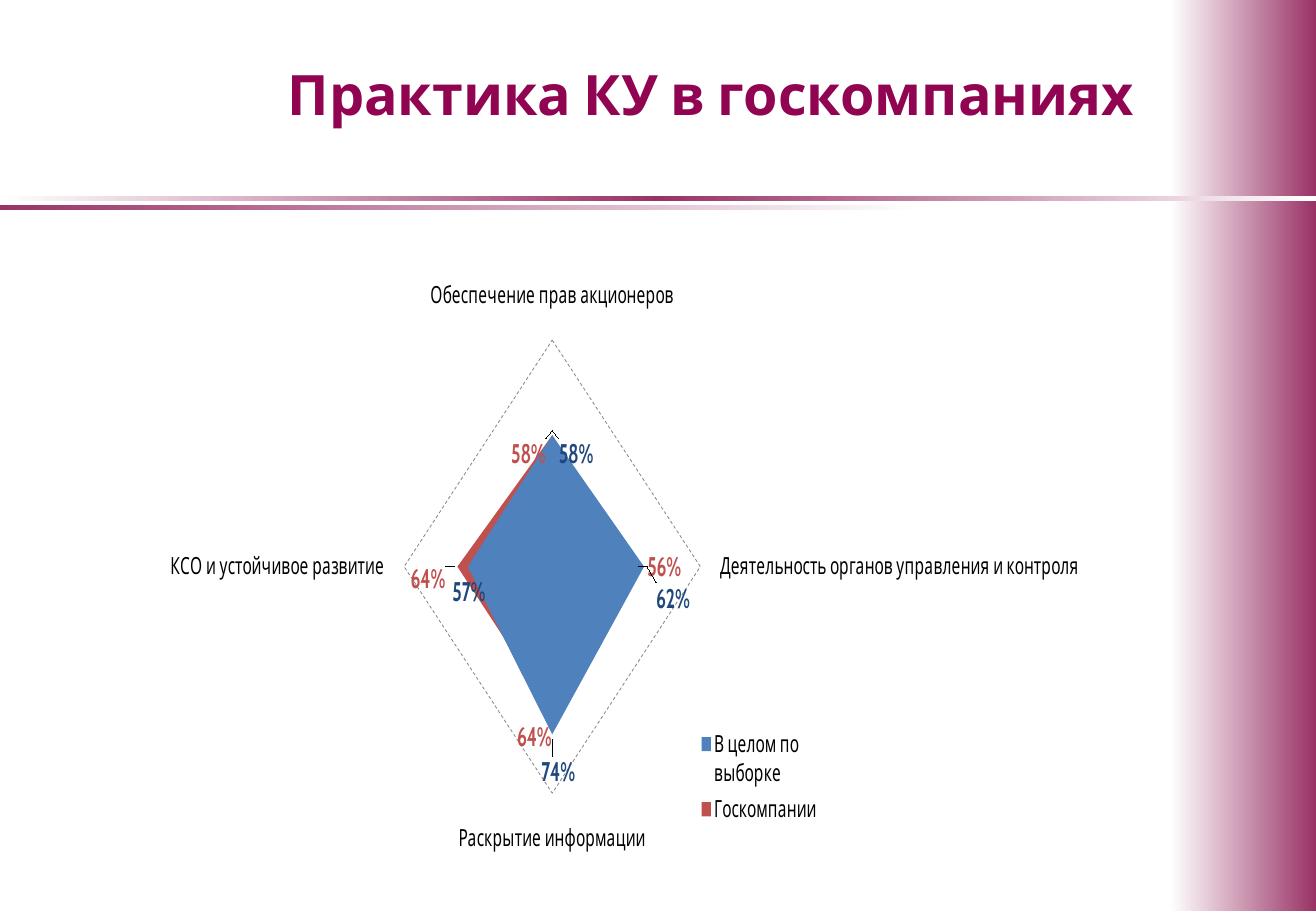
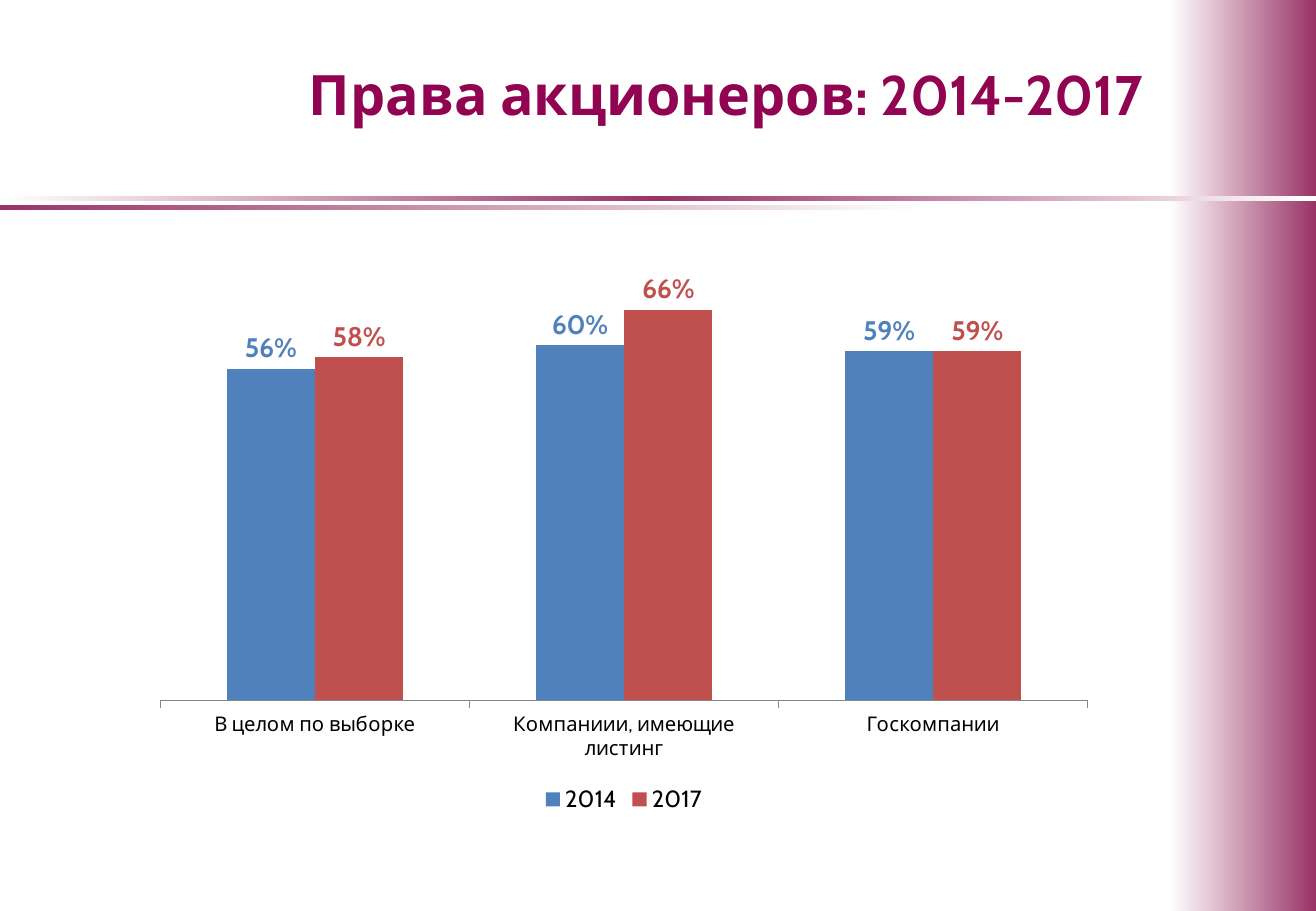
"""Two slides on governance in state companies."""
from dataclasses import dataclass

from lxml import etree
from pptx import Presentation
from pptx.chart.data import CategoryChartData
from pptx.dml.color import RGBColor
from pptx.enum.chart import XL_CHART_TYPE, XL_LABEL_POSITION, XL_LEGEND_POSITION
from pptx.enum.chart import XL_TICK_LABEL_POSITION, XL_TICK_MARK
from pptx.enum.dml import MSO_LINE
from pptx.enum.shapes import MSO_SHAPE
from pptx.enum.text import MSO_ANCHOR, MSO_AUTO_SIZE, PP_ALIGN
from pptx.oxml.ns import qn
from pptx.util import Cm, Pt

RADAR = XL_CHART_TYPE.RADAR_FILLED
COLUMN = XL_CHART_TYPE.COLUMN_CLUSTERED
RIGHT, BOTTOM = XL_LEGEND_POSITION.RIGHT, XL_LEGEND_POSITION.BOTTOM
OUTER = XL_LABEL_POSITION.OUTSIDE_END
LOW = XL_TICK_LABEL_POSITION.LOW
OUT, NONE = XL_TICK_MARK.OUTSIDE, XL_TICK_MARK.NONE
DASH = MSO_LINE.DASH
RECT = MSO_SHAPE.RECTANGLE
MIDDLE, CENTER = MSO_ANCHOR.MIDDLE, PP_ALIGN.CENTER
FIXED = MSO_AUTO_SIZE.NONE


@dataclass(frozen=True)
class Theme:
    """Colours, font and type sizes of the deck."""
    font: str = "Cabin"
    title: str = "900451"
    band: str = "993366"
    white: str = "FFFFFF"
    black: str = "000000"
    grid: str = "868686"
    blue: str = "4F81BD"
    navy: str = "1F497D"
    red: str = "C0504D"
    head: int = 33
    value: int = 16
    label: int = 14
    small: int = 12
    base: int = 10


def place(node, index, **parts):
    """Give a chart node a manual layout."""
    for old in node.findall(qn("c:layout")):
        node.remove(old)
    layout = etree.Element(qn("c:layout"))
    manual = etree.SubElement(layout, qn("c:manualLayout"))
    for name, val in parts.items():
        etree.SubElement(manual, qn("c:" + name)).set("val", str(val))
    node.insert(index, layout)


class Deck:
    """Holds the style and the current slide."""

    def __init__(self, theme):
        """Start an empty deck."""
        self.theme = theme
        self.prs = Presentation()
        self.prs.slide_width, self.prs.slide_height = Cm(27.51), Cm(19.05)
        self.base = self.prs.slide_layouts[5]
        self.count = 0

    def style(self, font, size, color, bold=False):
        """Set one font."""
        font.name, font.size, font.bold = self.theme.font, Pt(size), bold
        font.color.rgb = RGBColor.from_string(color)

    def open(self, text, left):
        """Add a slide with its title."""
        self.page = self.prs.slides.add_slide(self.base)
        title = self.page.shapes.title
        title.left, title.top = Cm(left), Cm(0)
        title.width, title.height = Cm(26.95 - left), Cm(3.89)
        frame = title.text_frame
        frame.text = text
        frame.word_wrap, frame.auto_size = True, FIXED
        frame.vertical_anchor = MIDDLE
        frame.margin_left = frame.margin_right = Cm(0.3)
        frame.margin_top = frame.margin_bottom = Cm(0.15)
        line = frame.paragraphs[0]
        line.alignment = CENTER
        self.style(line.font, self.theme.head, self.theme.title, True)

    def band(self, box, colors):
        """Put an evenly stepped gradient band on the shared layout."""
        shape = self.page.shapes.add_shape(RECT, *map(Cm, box))
        shape.shadow.inherit = False
        shape.line.fill.background()
        shape.fill.gradient()
        shape.fill.gradient_angle = 0
        node = shape.element
        stops = next(node.iter(qn("a:gsLst")))
        for old in list(stops):
            stops.remove(old)
        for i, color in enumerate(colors):
            stop = etree.SubElement(stops, qn("a:gs"))
            stop.set("pos", str(100000 * i // (len(colors) - 1)))
            etree.SubElement(stop, qn("a:srgbClr")).set("val", color)
        next(node.iter(qn("p:cNvPr"))).set("id", str(50 + self.count))
        self.base.shapes.element.insert(2 + self.count, node)
        self.count += 1

    def chart(self, kind, box, cats, rows, inks, side, size, top):
        """Add a percent chart with coloured series and labels."""
        theme = self.theme
        data = CategoryChartData(number_format="0%")
        data.categories = cats
        for name, vals in rows:
            data.add_series(name, vals)
        chart = self.page.shapes.add_chart(kind, *map(Cm, box), data).chart
        self.style(chart.font, theme.base, theme.black)
        chart.has_title = False
        chart.has_legend = True
        chart.legend.position = side
        chart.legend.include_in_layout = False
        self.style(chart.legend.font, theme.label, theme.black)
        chart.plots[0].vary_by_categories = False
        self.style(chart.category_axis.tick_labels.font, size, theme.black)
        axis = chart.value_axis
        axis.minimum_scale, axis.maximum_scale = 0, top
        axis.visible = False
        for row, fill, ink in zip(chart.series, (theme.blue, theme.red), inks):
            row.format.fill.solid()
            row.format.fill.fore_color.rgb = RGBColor.from_string(fill)
            marks = row.data_labels
            marks.show_value = True
            marks.number_format, marks.number_format_is_linked = "0%", False
            self.style(marks.font, theme.value, ink, True)
        return chart

    def radar(self, box, cats, rows, shifts):
        """Add a filled radar with shifted labels."""
        theme = self.theme
        inks = theme.navy, theme.red
        chart = self.chart(RADAR, box, cats, rows, inks, RIGHT, theme.label, 1)
        axis = chart.value_axis
        axis.major_unit = 1
        axis.major_tick_mark = NONE
        line = axis.major_gridlines.format.line
        line.color.rgb = RGBColor.from_string(theme.grid)
        line.width, line.dash_style = Pt(0.75), DASH
        for row, ink in zip(chart.series, inks):
            for i in range(len(cats)):
                font = row.points[i].data_label.font
                self.style(font, theme.value, ink, True)
        root = chart.element
        for node, (x, y) in zip(root.iter(qn("c:dLbl")), shifts):
            place(node, 1, x=x, y=y)
        place(next(root.iter(qn("c:plotArea"))), 0, layoutTarget="inner",
              xMode="edge", yMode="edge", x=0.222, y=0.149, w=0.519, h=0.712)
        place(next(root.iter(qn("c:legend"))), 1, xMode="edge", yMode="edge",
              x=0.73, y=0.75, w=0.2, h=0.17)

    def column(self, box, cats, rows):
        """Add a clustered column chart."""
        theme = self.theme
        inks = theme.blue, theme.red
        chart = self.chart(COLUMN, box, cats, rows, inks, BOTTOM, theme.small, 0.7)
        chart.value_axis.has_major_gridlines = False
        chart.plots[0].gap_width, chart.plots[0].overlap = 150, 0
        axis = chart.category_axis
        axis.major_tick_mark, axis.tick_label_position = OUT, LOW
        axis.format.line.color.rgb = RGBColor.from_string(theme.grid)
        for row in chart.series:
            row.data_labels.position = OUTER


def main():
    """Build and save the deck."""
    theme = Theme()
    deck = Deck(theme)
    deck.open("Практика КУ в госкомпаниях", 2.77)
    deck.band((24.46, 0, 3.05, 19.05), (theme.white, theme.band))
    deck.band((0, 4.11, 27.51, 0.1), (theme.white, theme.band, theme.white))
    deck.band((0, 4.29, 19.25, 0.1), (theme.band, theme.white))
    deck.radar(
        (3.56, 5.13, 19, 13.31),
        ("Обеспечение прав акционеров",
         "Деятельность органов управления и контроля",
         "Раскрытие информации", "КСО и устойчивое развитие"),
        (("В целом по выборке", (0.58, 0.62, 0.74, 0.57)),
         ("Госкомпании", (0.58, 0.56, 0.64, 0.64))),
        ((0.04, 0.07), (0.01, 0.05), (0.01, 0.02), (0.04, 0.04),
         (-0.04, 0.07), (0.01, 0), (-0.03, 0), (-0.01, 0.02)))
    deck.open("Права акционеров: 2014-2017", 3.4)
    deck.column(
        (2.95, 5.72, 20.19, 11.4),
        ("В целом по выборке", "Компаниии, имеющие листинг", "Госкомпании"),
        (("2014", (0.56, 0.6, 0.59)), ("2017", (0.58, 0.66, 0.59))))
    deck.prs.save("out.pptx")


if __name__ == "__main__":
    main()
